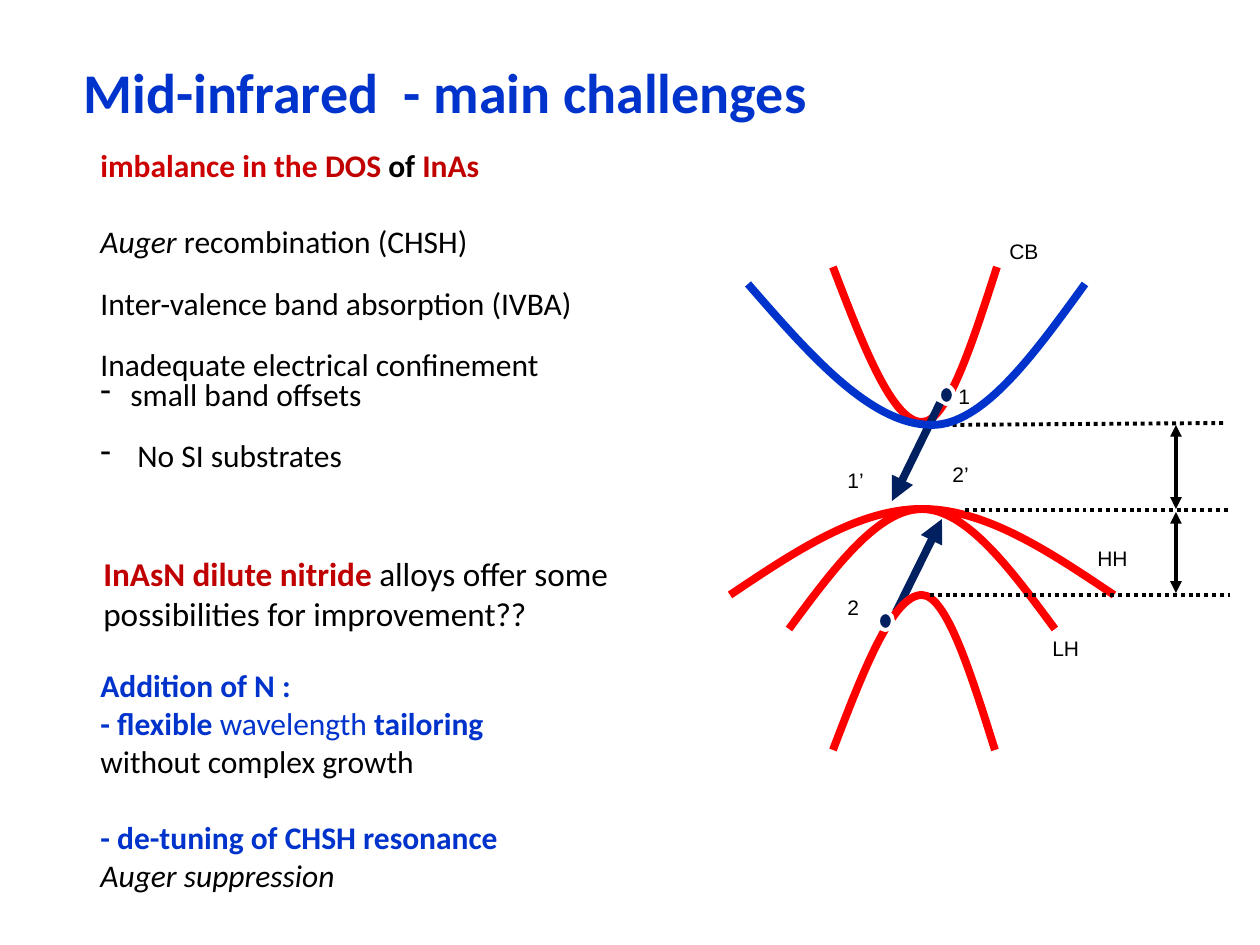
from dataclasses import dataclass
from pptx import Presentation
from pptx.dml.color import RGBColor
from pptx.enum.dml import MSO_LINE
from pptx.enum.shapes import MSO_CONNECTOR, MSO_SHAPE
from pptx.enum.text import MSO_ANCHOR, PP_ALIGN
from pptx.oxml.ns import qn
from pptx.util import Pt
from lxml.etree import SubElement

SCALE = 914400 / 126


@dataclass(frozen=True)
class Theme:
    """Colours, fonts and sizes of the slide."""
    blue: str = "0033CC"
    red: str = "CC0000"
    dark: str = "C00000"
    band: str = "FF0000"
    navy: str = "002060"
    black: str = "000000"
    white: str = "FFFFFF"
    font: str = "Calibri"
    tag: str = "Arial"
    head: int = 32
    note: int = 19
    body: int = 18
    small: int = 12
    thick: float = 4.5
    thin: float = 2.25


T = Theme()


def emu(px):
    """Turn px into EMU."""
    return round(px * SCALE)


def write(par, text, color=T.black, size=T.body, font=T.font, bold=False, italic=False):
    """Add one formatted run to a paragraph."""
    run = par.add_run()
    run.text = text
    face = run.font
    face.name, face.size, face.bold, face.italic = font, Pt(size), bold, italic
    face.color.rgb = RGBColor.from_string(color)


class Deck:
    """Holds the theme and the current slide."""

    def __init__(self, prs, theme):
        """Open a title-only slide."""
        self.theme = theme
        self.slide = prs.slides.add_slide(prs.slide_layouts[5])
        self.shapes = self.slide.shapes

    def title(self, text, *box):
        """Place and fill the title."""
        shape = self.shapes.title
        shape.left, shape.top, shape.width, shape.height = map(emu, box)
        frame = shape.text_frame
        frame.vertical_anchor = MSO_ANCHOR.MIDDLE
        par = frame.paragraphs[0]
        par.alignment = PP_ALIGN.LEFT
        write(par, text, color=self.theme.blue, size=self.theme.head, bold=True)

    def text(self, box, rows):
        """Add a text box; a row is its runs, gap, line spacing and indent."""
        frame = self.shapes.add_textbox(*map(emu, box)).text_frame
        frame.word_wrap = True
        for i, (runs, gap, lead, dent) in enumerate(rows):
            par = frame.add_paragraph() if i else frame.paragraphs[0]
            if gap:
                par.space_before = Pt(gap)
            par.line_spacing = lead
            if dent:
                props = par._p.get_or_add_pPr()
                props.set("marL", str(emu(dent)))
                props.set("indent", str(-emu(dent)))
                SubElement(props, qn("a:buChar")).set("char", "-")
            for words, style in runs:
                write(par, words, **style)

    def label(self, text, *box):
        """Add a small diagram label."""
        style = dict(font=self.theme.tag, size=self.theme.small)
        self.text(box, [([(text, style)], 0, 1.0, 0)])

    def line(self, ends, color, width, dash=None, tips=()):
        """Add a straight line with optional dash and arrowheads."""
        link = self.shapes.add_connector(MSO_CONNECTOR.STRAIGHT, *map(emu, ends))
        link.line.color.rgb = RGBColor.from_string(color)
        link.line.width = Pt(width)
        if dash:
            link.line.dash_style = dash
        props = link._element.spPr
        for tip in tips:
            SubElement(props.find(qn("a:ln")), qn(f"a:{tip}End")).set("type", "triangle")
        SubElement(props, qn("a:effectLst"))

    def band(self, left, mid, right, end, apex, color):
        """Add an energy band as two cubic curves that meet at the apex."""
        half = (end + apex) / 2
        dots = [(left, end), ((2 * left + mid) / 3, half), ((left + 2 * mid) / 3, apex),
                (mid, apex), ((2 * mid + right) / 3, apex), ((mid + 2 * right) / 3, half),
                (right, end)]
        dots = [(emu(x), emu(y)) for x, y in dots]
        pen = self.shapes.build_freeform(*dots[0])
        pen.add_line_segments(dots[1:], close=False)
        shape = pen.convert_to_shape()
        track = next(shape._element.iter(qn("a:path")))
        steps = track.findall(qn("a:lnTo"))
        for i in range(0, len(steps), 3):
            curve = SubElement(track, qn("a:cubicBezTo"))
            for step in steps[i:i + 3]:
                curve.append(step[0])
                track.remove(step)
        shape.fill.background()
        shape.line.color.rgb = RGBColor.from_string(color)
        shape.line.width = Pt(self.theme.thick)
        shape.shadow.inherit = False

    def dot(self, *box):
        """Add a carrier dot."""
        shape = self.shapes.add_shape(MSO_SHAPE.OVAL, *map(emu, box))
        shape.fill.solid()
        shape.fill.fore_color.rgb = RGBColor.from_string(self.theme.navy)
        shape.line.color.rgb = RGBColor.from_string(self.theme.white)
        shape.line.width = Pt(self.theme.thin)
        shape.shadow.inherit = False


def main():
    """Build the slide and save it."""
    prs = Presentation()
    prs.slide_width, prs.slide_height = emu(1260), emu(945)
    deck = Deck(prs, T)
    plain, slant = {}, dict(italic=True)
    blue, dark = dict(color=T.blue, bold=True), dict(color=T.dark, bold=True)
    full, tight = 22, 17.6

    deck.title("Mid-infrared  - main challenges", 71, 47, 1125, 89)
    deck.text((88, 140, 877, 761), [
        ([("imbalance in the ", dict(color=T.red, bold=True)), ("DOS ", dark),
          ("of ", dict(bold=True)), ("InAs", dark)], 0, 1.0, 0),
        ([("Auger ", slant), ("recombination (CHSH)", plain)], full, 1.0, 0),
        ([("Inter-valence band absorption (IVBA)", plain)], tight, 0.8, 0),
        ([("Inadequate electrical confinement", plain)], tight, 0.8, 0),
        ([("small band offsets", plain)], 0, 0.8, 30),
        ([("No SI substrates", plain)], tight, 0.8, 37),
        ([("Addition of N :", blue)], 5 * full, 1.0, 0),
        ([("- flexible ", blue), ("wavelength", dict(color=T.blue)),
          (" tailoring", blue)], 0, 1.0, 0),
        ([("without complex growth", plain)], 0, 1.0, 0),
        ([("- de-tuning of CHSH resonance", blue)], full, 1.0, 0),
        ([("Auger suppression", slant)], 0, 1.0, 0),
    ])
    deck.text((91, 547, 640, 93), [
        ([("InAsN dilute nitride ", dict(dark, size=T.note)),
          ("alloys offer some possibilities for improvement??", dict(size=T.note))],
         0, 1.0, 0)])

    for tag in (("2’", 940, 455, 57, 60), ("1’", 835, 461, 60, 48),
                ("2", 835, 588, 55, 55), ("1", 946, 377, 44, 34),
                ("CB", 997, 232, 74, 52), ("LH", 1040, 629, 74, 52),
                ("HH", 1085, 539, 78, 52)):
        deck.label(*tag)

    deck.line((896, 612, 942, 519), T.navy, T.thick, tips=("tail",))
    for ends in ((833, 922, 995, 750, 595), (833, 922, 997, 267, 422),
                 (730, 922, 1114, 595, 509), (789, 922, 1055, 629, 509)):
        deck.band(*ends, T.band)
    deck.dot(878, 612, 15, 18)
    deck.dot(939, 386, 15, 18)
    deck.line((940, 403, 892, 501), T.navy, T.thick, tips=("tail",))
    for ends in ((937, 425, 1225, 423), (965, 510, 1231, 510), (930, 595, 1230, 595)):
        deck.line(ends, T.black, T.thin, dash=MSO_LINE.ROUND_DOT)
    for top, base in ((425, 509), (512, 593)):
        deck.line((1176, top, 1176, base), T.black, T.thin, tips=("head", "tail"))
    deck.band(748, 932, 1085, 284, 425, T.blue)

    prs.save("out.pptx")


if __name__ == "__main__":
    main()
